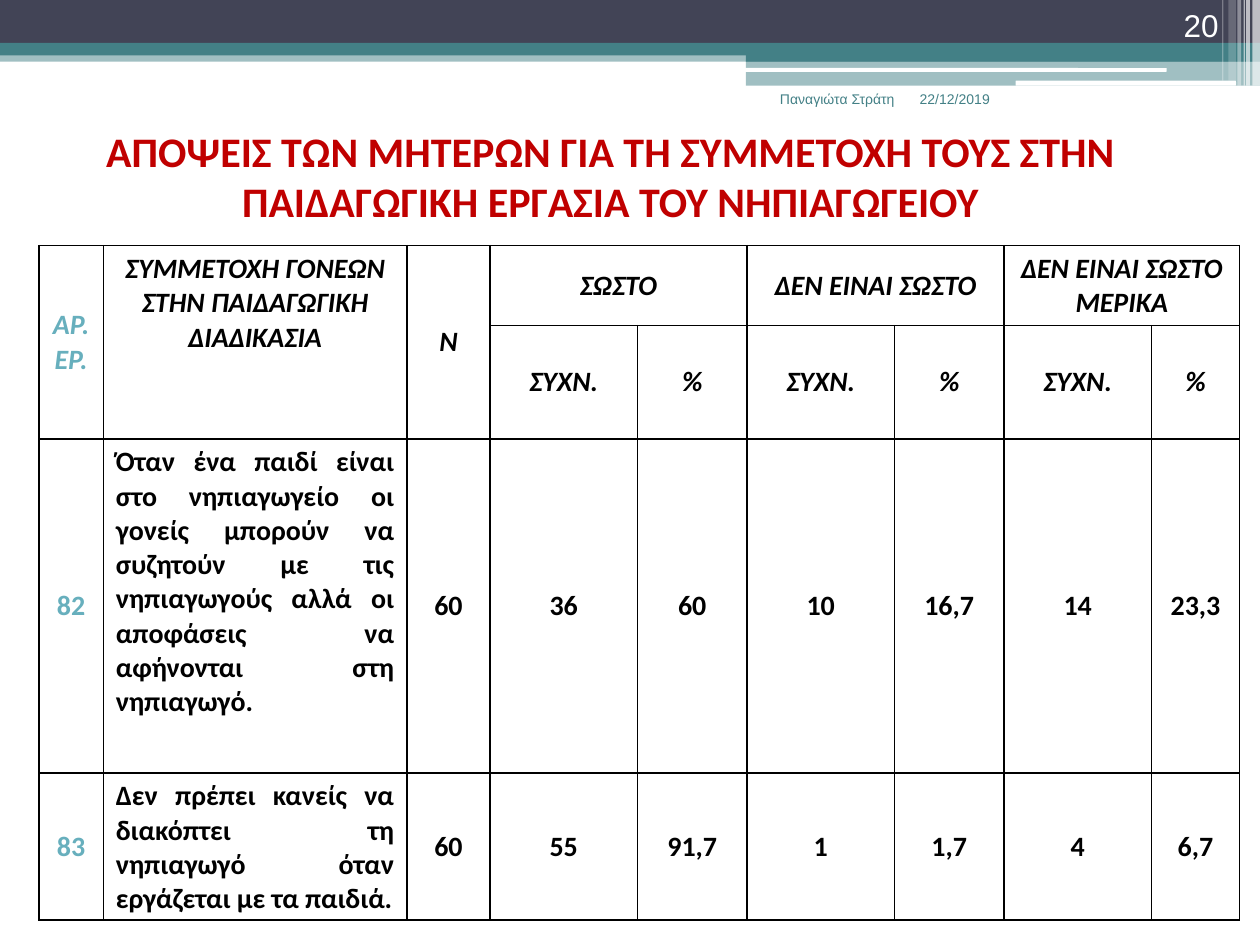
"""Build a slide with a table of mothers' views on taking part in kindergarten work."""
from dataclasses import dataclass

from lxml import etree
from pptx import Presentation
from pptx import util as u
from pptx.dml.color import RGBColor
from pptx.enum import shapes, text
from pptx.oxml import ns


@dataclass(frozen=True)
class Theme:
    white: str = "FFFFFF"
    black: str = "000000"
    navy: str = "424456"
    teal: str = "438086"
    aqua: str = "67AFBD"
    red: str = "C00000"
    body: str = "Calibri"
    small: str = "Arial"
    title_pt: int = 24
    number_pt: int = 18
    cell_pt: int = 16
    footer_pt: int = 8
    border_pt: int = 1


T = Theme()
W, H = 10, 7.5
LEFT, CENTER, RIGHT, JUSTIFY = (text.PP_ALIGN.LEFT, text.PP_ALIGN.CENTER,
                                text.PP_ALIGN.RIGHT, text.PP_ALIGN.JUSTIFY)
TOP, MIDDLE, BOTTOM = text.MSO_ANCHOR.TOP, text.MSO_ANCHOR.MIDDLE, text.MSO_ANCHOR.BOTTOM
RECT, ROUND = shapes.MSO_SHAPE.RECTANGLE, shapes.MSO_SHAPE.ROUNDED_RECTANGLE

BANDS = [
    (RECT, (0, 0.4, W, 0.09), T.teal, 50),
    (RECT, (0, 0, W, 0.34), T.navy, 100),
    (RECT, (0, 0.34, W, 0.1), T.teal, 100),
    (RECT, (5.92, 0.39, 4.08, 0.1), T.teal, 100),
    (RECT, (5.92, 0.48, 4.08, 0.2), T.teal, 50),
    (ROUND, (5.91, 0.54, 3.35, 0.03), T.white, 100),
    (ROUND, (8.06, 0.64, 1.75, 0.04), T.white, 100),
]
STRIPES = [(9.94, 0.06, 0.68, 65), (9.89, 0.03, 0.68, 65), (9.87, 0.01, 0.68, 60),
           (9.82, 0.03, 0.68, 40), (9.75, 0.06, 0.64, 20), (9.7, 0.01, 0.64, 30)]

TITLE = "ΑΠΟΨΕΙΣ ΤΩΝ ΜΗΤΕΡΩΝ ΓΙΑ ΤΗ ΣΥΜΜΕΤΟΧΗ ΤΟΥΣ ΣΤΗΝ ΠΑΙΔΑΓΩΓΙΚΗ ΕΡΓΑΣΙΑ ΤΟΥ ΝΗΠΙΑΓΩΓΕΙΟΥ"
LABELS = [
    ("22/12/2019", (7.2, 0.67, 1.05, 0.5), LEFT, TOP, (T.small, T.footer_pt, T.teal)),
    ("Παναγιώτα Στράτη", (5.75, 0.67, 1.45, 0.5), RIGHT, TOP, (T.small, T.footer_pt, T.teal)),
    ("20", (8.94, 0, 0.83, 0.4), RIGHT, BOTTOM, (T.small, T.number_pt, T.white)),
    (TITLE, (0.59, 0.94, 8.51, 0.91), CENTER, MIDDLE, (T.body, T.title_pt, T.red, True)),
]

TABLE_AT = (0.31, 1.95)
COLS = [0.51, 2.41, 0.66, 1.17, 0.87, 1.17, 0.87, 1.17, 0.7]
ROWS = [0.63, 0.9, 2.65, 1.17]
HEADS = ["ΑΡ. ΕΡ.", "ΣΥΜΜΕΤΟΧΗ ΓΟΝΕΩΝ ΣΤΗΝ ΠΑΙΔΑΓΩΓΙΚΗ ΔΙΑΔΙΚΑΣΙΑ", "Ν"]
GROUPS = ["ΣΩΣΤΟ", "ΔΕΝ ΕΙΝΑΙ ΣΩΣΤΟ", "ΔΕΝ ΕΙΝΑΙ ΣΩΣΤΟ ΜΕΡΙΚΑ"]
MEASURES = ["ΣΥΧΝ.", "%"]
ANSWERS = [
    ["82", "Όταν ένα παιδί είναι στο νηπιαγωγείο οι γονείς μπορούν να συζητούν με τις "
     "νηπιαγωγούς αλλά οι αποφάσεις να αφήνονται στη νηπιαγωγό.",
     "60", "36", "60", "10", "16,7", "14", "23,3"],
    ["83", "Δεν πρέπει κανείς να διακόπτει τη νηπιαγωγό όταν εργάζεται με τα παιδιά.",
     "60", "55", "91,7", "1", "1,7", "4", "6,7"],
]


def inches(box):
    return [u.Inches(v) for v in box]


def paint(fill, color, alpha=100):
    fill.solid()
    fill.fore_color.rgb = RGBColor.from_string(color)
    if alpha < 100:
        clr = fill._xPr.find(".//" + ns.qn("a:srgbClr"))
        etree.SubElement(clr, ns.qn("a:alpha"), val=str(alpha * 1000))


def add_bar(s, kind, box, color, alpha):
    sp = s.shapes.add_shape(kind, *inches(box))
    sp.shadow.inherit = False
    sp.line.fill.background()
    paint(sp.fill, color, alpha)


def write(tf, words, align, font, size, color, bold=False, italic=False):
    tf.text = words
    tf.word_wrap = True
    p = tf.paragraphs[0]
    p.alignment = align
    r = p.runs[0]
    r.font.name, r.font.size = font, u.Pt(size)
    r.font.bold, r.font.italic = bold, italic
    r.font.color.rgb = RGBColor.from_string(color)


def add_label(s, words, box, align, anchor, style):
    tf = s.shapes.add_textbox(*inches(box)).text_frame
    write(tf, words, align, *style)
    tf.vertical_anchor = anchor


def add_borders(cell):
    props = cell._tc.get_or_add_tcPr()
    for side in ("lnL", "lnR", "lnT", "lnB"):
        ln = etree.SubElement(props, ns.qn("a:" + side), w=str(u.Pt(T.border_pt)))
        fill = etree.SubElement(ln, ns.qn("a:solidFill"))
        etree.SubElement(fill, ns.qn("a:srgbClr"), val=T.black)


def add_answers(s):
    frame = s.shapes.add_table(len(ROWS), len(COLS),
                               *inches(TABLE_AT + (sum(COLS), sum(ROWS))))
    table = frame.table
    for col, width in zip(table.columns, COLS):
        col.width = u.Inches(width)
    for row, height in zip(table.rows, ROWS):
        row.height = u.Inches(height)
    for cell in table.iter_cells():
        add_borders(cell)
        paint(cell.fill, T.white)

    first = len(HEADS)
    for c in range(first):
        table.cell(0, c).merge(table.cell(1, c))
    for c in range(first, len(COLS), len(MEASURES)):
        table.cell(0, c).merge(table.cell(0, c + len(MEASURES) - 1))

    grid = [HEADS + [w for g in GROUPS for w in (g, "")],
            [""] * first + MEASURES * len(GROUPS)] + ANSWERS
    for r, row in enumerate(grid):
        for c, words in enumerate(row):
            if not words:
                continue
            cell = table.cell(r, c)
            head = r < 2
            cell.vertical_anchor = TOP if c == 1 else MIDDLE
            write(cell.text_frame, words, JUSTIFY if c == 1 and not head else CENTER,
                  T.body, T.cell_pt, T.aqua if c == 0 else T.black, True, head)


def main():
    prs = Presentation()
    prs.slide_width, prs.slide_height = inches((W, H))
    s = prs.slides.add_slide(prs.slide_layouts[6])
    for band in BANDS:
        add_bar(s, *band)
    for x, width, height, alpha in STRIPES:
        add_bar(s, RECT, (x, 0, width, height), T.white, alpha)
    for label in LABELS:
        add_label(s, *label)
    add_answers(s)
    prs.save("out.pptx")


if __name__ == "__main__":
    main()
